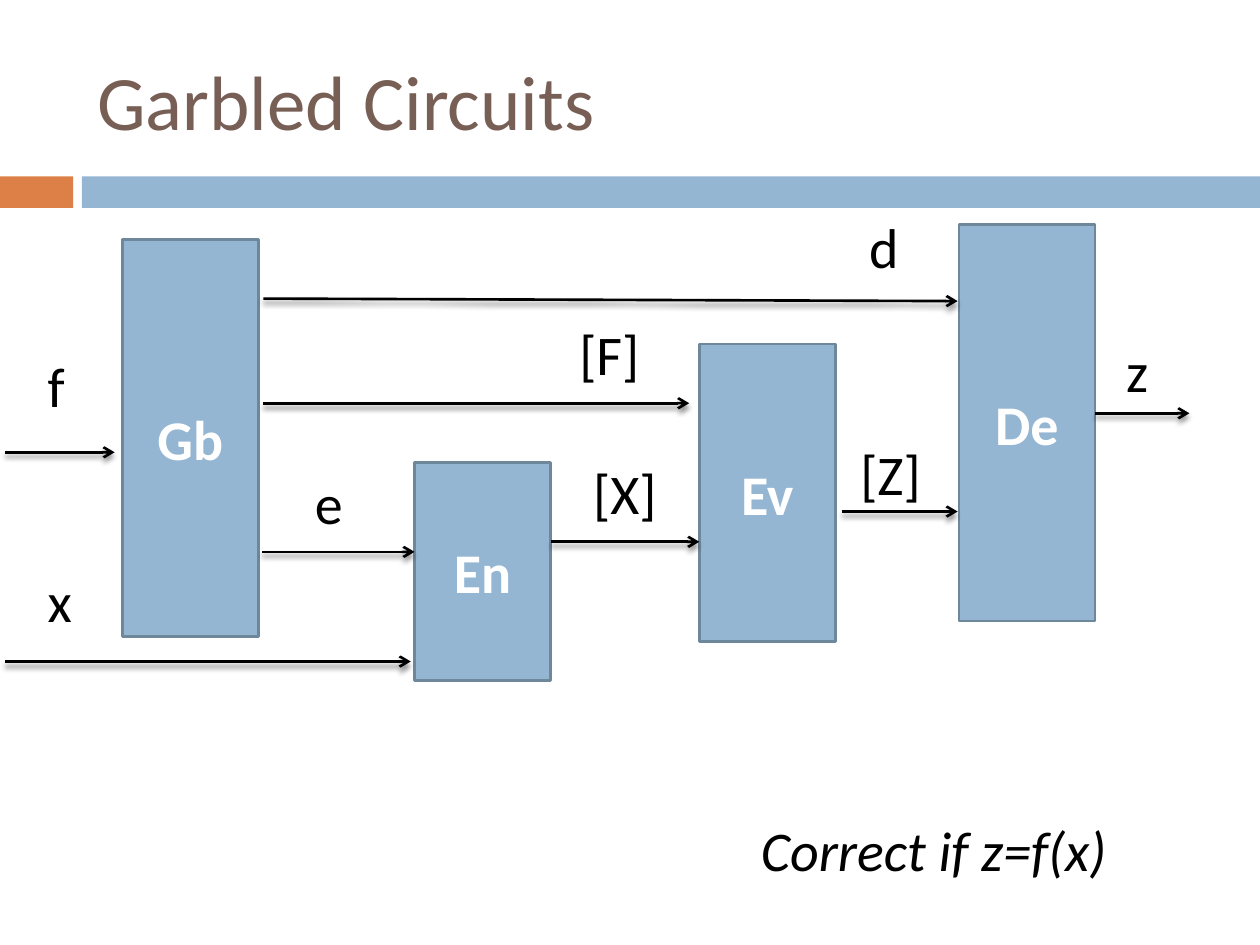
import collections

import pptx
import pptx.dml.color
import pptx.enum.shapes
import pptx.enum.text
import pptx.oxml
import pptx.util

Box = collections.namedtuple("Box", "left top width height")
COLUMNS, ROWS = 100, 75
FONT = "Calibri"
BLUE, ORANGE, EDGE, BROWN = "94B6D2", "DD8047", "6D879B", "775F55"
BLACK, WHITE = "000000", "FFFFFF"
NS = 'xmlns:a="http://schemas.openxmlformats.org/drawingml/2006/main"'
SHADOW = (
    f'<a:effectLst {NS}><a:outerShdw blurRad="38100" dist="30480" dir="5400000" rotWithShape="0">'
    '<a:srgbClr val="000000"><a:alpha val="45000"/></a:srgbClr></a:outerShdw></a:effectLst>'
)
ARROWHEAD = f'<a:tailEnd {NS} type="arrow"/>'

STAGES = [
    ("Ev", 55.5, 11.3, 23.6),
    ("De", 76.1, 1.8, 31.5),
    ("Gb", 9.7, 3, 31.5),
    ("En", 32.9, 20.7, 17.3),
]
STAGE_WIDTH = 10.8
FLOWS = [
    ("f", 2.8, 11.4, 3.7, 0.4, 19.9, 9.1, 19.9),
    ("x", 2.8, 28.5, 4.8, 0.4, 36.5, 32.6, 36.5),
    ("[F]", 45, 8.9, 7.3, 20.9, 16, 54.7, 16),
    ("e", 24, 20.7, 4.5, 20.8, 27.8, 32.9, 27.8),
    ("d", 68, 0.4, 4.8, 20.9, 7.7, 76, 7.9),
    ("[X]", 46.1, 19.9, 7.7, 43.7, 27, 55.5, 27),
    ("[Z]", 67.3, 18.4, 7.6, 66.8, 24.6, 76, 24.6),
    ("z", 88.4, 10.2, 4.6, 86.9, 16.8, 94.4, 16.8),
]
LABEL_HEIGHT = 6.4


def rgb(value):
    return pptx.dml.color.RGBColor.from_string(value)


def grid(*values):
    return [pptx.util.Inches(v / 10) for v in values]


def style(p, size, color, bold=False, italic=False):
    p.font.name = FONT
    p.font.size = pptx.util.Pt(size)
    p.font.color.rgb = rgb(color)
    p.font.bold = bold
    p.font.italic = italic


def add_rect(slide, box, fill, line=None):
    sp = slide.shapes.add_shape(pptx.enum.shapes.MSO_SHAPE.RECTANGLE, *grid(*box))
    sp.shadow.inherit = False
    sp.fill.solid()
    sp.fill.fore_color.rgb = rgb(fill)
    if line:
        sp.line.color.rgb = rgb(line)
        sp.line.width = pptx.util.Pt(1.5)
    else:
        sp.line.fill.background()
    return sp


def add_label(slide, box, text, italic=False):
    tf = slide.shapes.add_textbox(*grid(*box)).text_frame
    tf.word_wrap = False
    tf.auto_size = pptx.enum.text.MSO_AUTO_SIZE.SHAPE_TO_FIT_TEXT
    p = tf.paragraphs[0]
    p.text = text
    style(p, 32, BLACK, italic=italic)


def add_arrow(slide, x1, y1, x2, y2):
    line = slide.shapes.add_connector(
        pptx.enum.shapes.MSO_CONNECTOR.STRAIGHT, *grid(x1, y1, x2, y2)
    )
    line.line.color.rgb = rgb(BLACK)
    line.line.width = pptx.util.Pt(1.5)
    line.line._get_or_add_ln().append(pptx.oxml.parse_xml(ARROWHEAD))
    line._element.spPr.append(pptx.oxml.parse_xml(SHADOW))


def add_stage(slide, box, name):
    tf = add_rect(slide, box, BLUE, EDGE).text_frame
    tf.vertical_anchor = pptx.enum.text.MSO_ANCHOR.MIDDLE
    p = tf.paragraphs[0]
    p.text = name
    p.alignment = pptx.enum.text.PP_ALIGN.CENTER
    style(p, 32, WHITE, bold=True)


def add_band(slide, box):
    accent, gap = 5.8, 0.7
    add_rect(slide, box._replace(width=accent), ORANGE)
    start = accent + gap
    add_rect(slide, box._replace(left=box.left + start, width=box.width - start), BLUE)


def add_title(slide, box, text):
    sp = slide.shapes.title
    sp.left, sp.top, sp.width, sp.height = grid(*box)
    tf = sp.text_frame
    tf.vertical_anchor = pptx.enum.text.MSO_ANCHOR.MIDDLE
    p = tf.paragraphs[0]
    p.text = text
    p.alignment = pptx.enum.text.PP_ALIGN.LEFT
    style(p, 44, BROWN)


def add_diagram(slide, box):
    for name, x, y, height in STAGES:
        add_stage(slide, Box(box.left + x, box.top + y, STAGE_WIDTH, height), name)
    for text, x, y, width, x1, y1, x2, y2 in FLOWS:
        add_arrow(slide, box.left + x1, box.top + y1, box.left + x2, box.top + y2)
        add_label(slide, Box(box.left + x, box.top + y, width, LABEL_HEIGHT), text)


def main():
    prs = pptx.Presentation()
    prs.slide_width, prs.slide_height = grid(COLUMNS, ROWS)
    slide = prs.slides.add_slide(prs.slide_layouts[5])
    add_band(slide, Box(0, 14, COLUMNS, 2.5))
    add_title(slide, Box(6.7, 2.5, 89.2, 10.8), "Garbled Circuits")
    add_diagram(slide, Box(0, 16, COLUMNS, 40))
    add_label(slide, Box(59.4, 64.2, 37.3, LABEL_HEIGHT), "Correct if z=f(x)", italic=True)
    prs.save("out.pptx")


if __name__ == "__main__":
    main()
